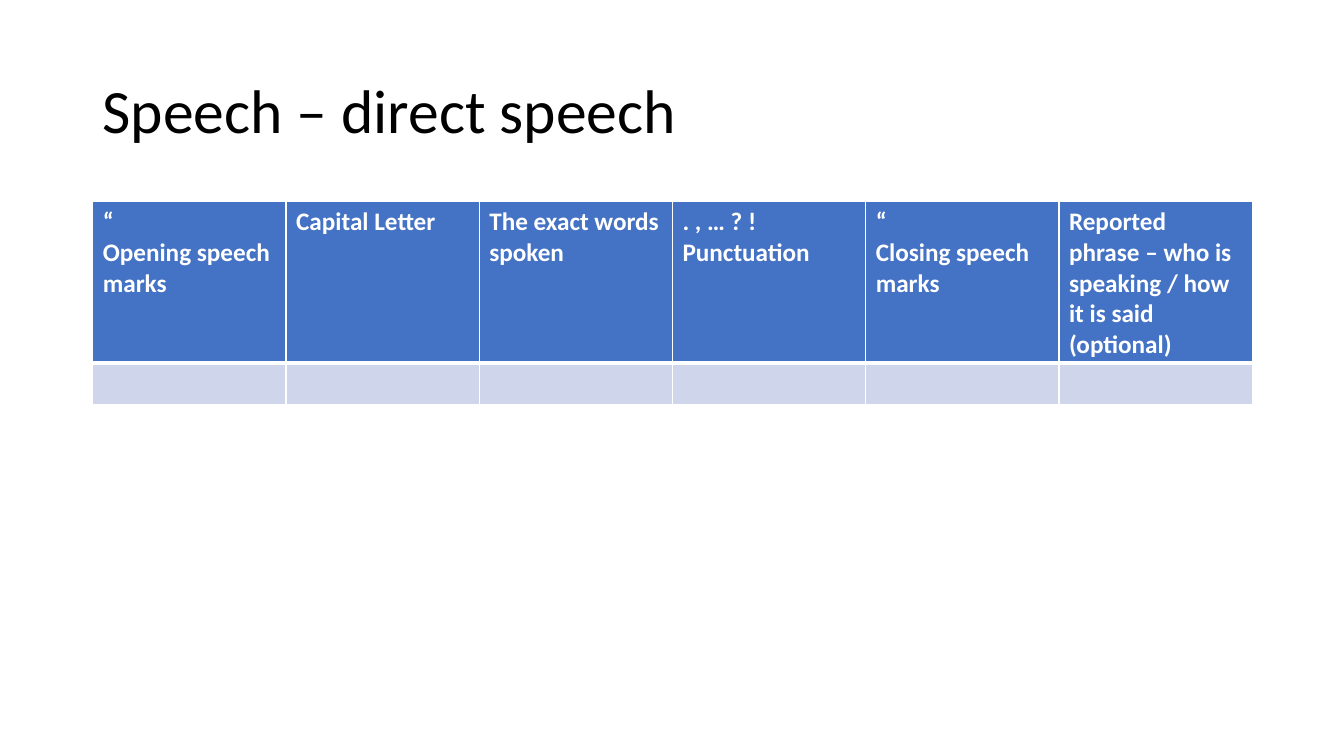
from dataclasses import dataclass

from lxml.etree import SubElement
from pptx import Presentation
from pptx.dml.color import RGBColor as Rgb
from pptx.enum.text import MSO_ANCHOR as Anchor
from pptx.oxml.ns import qn
from pptx.util import Inches, Pt


@dataclass(frozen=True)
class Theme:
    face: str = "Calibri"
    ink: str = "000000"
    white: str = "FFFFFF"
    head: str = "4472C4"
    band: str = "CFD5EA"
    big: int = 44
    base: int = 18
    thin: int = 1
    thick: int = 3


THEME = Theme()
LEFT, WIDTH = 0.92, 11.5
HEADS = [
    "“\nOpening speech marks",
    "Capital Letter",
    "The exact words spoken",
    ". , … ? !\nPunctuation",
    "“\nClosing speech marks",
    "Reported phrase – who is speaking / how it is said (optional)",
]
ROWS = [
    (1.6, THEME.head, HEADS, THEME.thin, THEME.thick),
    (0.41, THEME.band, [""] * len(HEADS), THEME.thick, THEME.thin),
]


def style(para, size, color, bold):
    form = {"name": THEME.face, "size": Pt(size), "bold": bold}
    for key, value in form.items():
        setattr(para.font, key, value)
    para.font.color.rgb = Rgb.from_string(color)


def title(slide, text):
    box = slide.shapes.add_textbox(
        Inches(LEFT), Inches(0.4), Inches(WIDTH), Inches(1.45))
    frame = box.text_frame
    form = {"word_wrap": True, "vertical_anchor": Anchor.MIDDLE, "text": text}
    for key, value in form.items():
        setattr(frame, key, value)
    para = frame.paragraphs[0]
    para.line_spacing = 0.9
    style(para, THEME.big, THEME.ink, False)


def border(cell, top, base):
    props = cell._tc.get_or_add_tcPr()
    sides = {"lnL": THEME.thin, "lnR": THEME.thin, "lnT": top, "lnB": base}
    for side, width in sides.items():
        line = SubElement(props, qn(f"a:{side}"), w=str(Pt(width)))
        fill = SubElement(line, qn("a:solidFill"))
        SubElement(fill, qn("a:srgbClr"), val=THEME.white)


def paint(cell, text, fill, top, base):
    border(cell, top, base)
    cell.fill.solid()
    cell.fill.fore_color.rgb = Rgb.from_string(fill)
    cell.text = text
    for para in cell.text_frame.paragraphs:
        style(para, THEME.base, THEME.white, True)


def grid(slide):
    high = sum(row[0] for row in ROWS)
    table = slide.shapes.add_table(
        len(ROWS), len(HEADS), Inches(LEFT), Inches(2),
        Inches(WIDTH), Inches(high)).table
    for row, (tall, fill, texts, top, base) in zip(table.rows, ROWS):
        row.height = Inches(tall)
        for cell, text in zip(row.cells, texts):
            paint(cell, text, fill, top, base)


def main():
    deck = Presentation()
    deck.slide_width, deck.slide_height = Inches(13.33), Inches(7.5)
    slide = deck.slides.add_slide(deck.slide_layouts[6])
    title(slide, "Speech – direct speech")
    grid(slide)
    deck.save("out.pptx")


if __name__ == "__main__":
    main()
